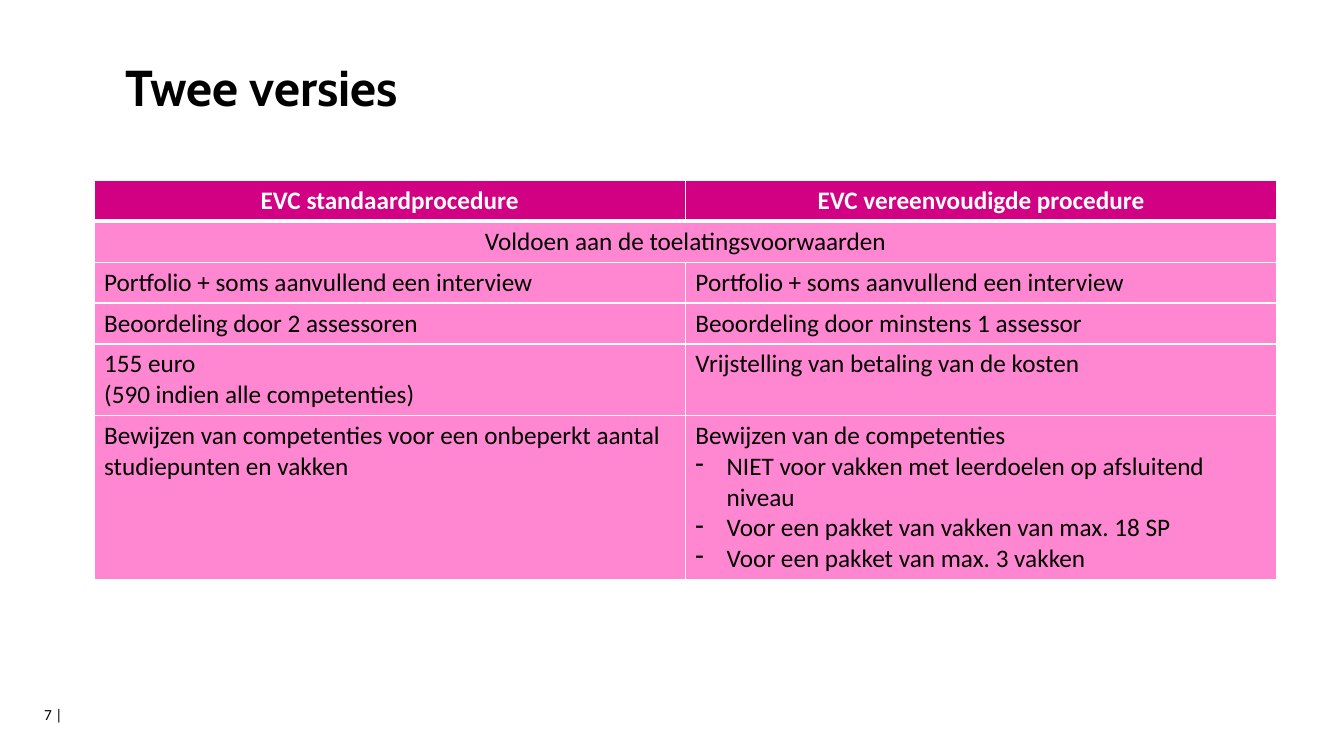
from dataclasses import dataclass

from lxml.etree import SubElement
from pptx import Presentation
from pptx.dml.color import RGBColor
from pptx.enum.text import MSO_ANCHOR, PP_ALIGN as Align
from pptx.oxml.ns import qn
from pptx.slide import Slide
from pptx.table import Table, _Cell as Cell
from pptx.text.text import TextFrame, _Paragraph as Paragraph
from pptx.util import Inches, Length, Pt

BLACK = RGBColor(0x00, 0x00, 0x00)
WHITE = RGBColor(0xFF, 0xFF, 0xFF)
MAGENTA = RGBColor(0xD2, 0x00, 0x82)
PINK = RGBColor(0xFF, 0x87, 0xD1)

SLIDE_WIDTH = Inches(13.33)
SLIDE_HEIGHT = Inches(7.5)
LINE_SHARE = 4.07
CELL_PADDING_SHARE = 1.33
DASH_INDENT = Inches(0.31)


@dataclass(frozen=True)
class Style:
    size: float
    font: str = "Calibri"
    color: RGBColor = BLACK
    bold: bool = False


@dataclass(frozen=True)
class Caption:
    """A text box, placed in percent of the slide."""
    text: str
    left: float
    top: float
    width: float
    height: float
    style: Style
    inset_left: float = 0.1
    line_spacing: float = 1.0


@dataclass(frozen=True)
class Entry:
    text: str
    dashes: tuple[str, ...] = ()


@dataclass(frozen=True)
class Row:
    """One entry per column; a single entry spans the whole row."""
    entries: tuple[Entry, ...]
    lines: int = 1
    header: bool = False


BODY = Style(18)
HEADER = Style(18, color=WHITE, bold=True)

CAPTIONS = (
    Caption("Twee versies", 8.85, 7.73, 88, 12.67,
            Style(36, "Cabin", bold=True), inset_left=0.07, line_spacing=0.9),
    Caption("7 |", 2.55, 92.67, 6.3, 5.33, Style(11)),
)

PROCEDURES = (
    Row((Entry("EVC standaardprocedure"),
         Entry("EVC vereenvoudigde procedure")), header=True),
    Row((Entry("Voldoen aan de toelatingsvoorwaarden"),)),
    Row((Entry("Portfolio + soms aanvullend een interview"),
         Entry("Portfolio + soms aanvullend een interview"))),
    Row((Entry("Beoordeling door 2 assessoren"),
         Entry("Beoordeling door minstens 1 assessor"))),
    Row((Entry("155 euro\n(590 indien alle competenties)"),
         Entry("Vrijstelling van betaling van de kosten")), lines=2),
    Row((Entry("Bewijzen van competenties voor een onbeperkt aantal "
               "studiepunten en vakken"),
         Entry("Bewijzen van de competenties",
               ("NIET voor vakken met leerdoelen op afsluitend niveau",
                "Voor een pakket van vakken van max. 18 SP",
                "Voor een pakket van max. 3 vakken"))), lines=5),
)


def across(percent: float) -> Length:
    return Length(round(SLIDE_WIDTH * percent / 100))


def down(percent: float) -> Length:
    return Length(round(SLIDE_HEIGHT * percent / 100))


def write(paragraph: Paragraph, text: str, style: Style) -> None:
    for number, line in enumerate(text.split("\n")):
        if number:
            paragraph.add_line_break()
        run = paragraph.add_run()
        run.text = line
        run.font.name = style.font
        run.font.size = Pt(style.size)
        run.font.bold = style.bold
        run.font.color.rgb = style.color


def add_caption(slide: Slide, caption: Caption) -> None:
    box = slide.shapes.add_textbox(across(caption.left), down(caption.top),
                                   across(caption.width), down(caption.height))
    frame = box.text_frame
    frame.word_wrap = True
    frame.vertical_anchor = MSO_ANCHOR.TOP
    frame.margin_left = Inches(caption.inset_left)
    paragraph = frame.paragraphs[0]
    paragraph.line_spacing = caption.line_spacing
    write(paragraph, caption.text, caption.style)


def add_dash(frame: TextFrame, text: str) -> None:
    paragraph = frame.add_paragraph()
    properties = paragraph._p.get_or_add_pPr()
    properties.set("marL", str(DASH_INDENT))
    properties.set("indent", str(-DASH_INDENT))
    SubElement(properties, qn("a:buChar"), char="-")
    write(paragraph, text, BODY)


def paint(cell: Cell, header: bool) -> None:
    """Give a cell its white borders and its fill."""
    properties = cell._tc.get_or_add_tcPr()
    for side in "LRTB":
        points = 3 if header and side == "B" else 1
        border = SubElement(properties, qn(f"a:ln{side}"), w=str(Pt(points)))
        solid = SubElement(border, qn("a:solidFill"))
        SubElement(solid, qn("a:srgbClr"), val=str(WHITE))
    cell.fill.solid()
    cell.fill.fore_color.rgb = MAGENTA if header else PINK


def fill_row(table: Table, index: int, row: Row) -> None:
    table.rows[index].height = down(CELL_PADDING_SHARE + row.lines * LINE_SHARE)
    cells = list(table.rows[index].cells)
    for cell in cells:
        paint(cell, row.header)
    spanning = len(row.entries) == 1
    if spanning:
        cells[0].merge(cells[-1])
    for cell, entry in zip(cells, row.entries):
        frame = cell.text_frame
        paragraph = frame.paragraphs[0]
        paragraph.alignment = Align.CENTER if row.header or spanning else Align.LEFT
        write(paragraph, entry.text, HEADER if row.header else BODY)
        for dash in entry.dashes:
            add_dash(frame, dash)


def add_procedures(slide: Slide) -> None:
    height = sum(CELL_PADDING_SHARE + row.lines * LINE_SHARE for row in PROCEDURES)
    table = slide.shapes.add_table(len(PROCEDURES), 2, across(7), down(23.87),
                                   across(88), down(height)).table
    table.horz_banding = False
    for index, row in enumerate(PROCEDURES):
        fill_row(table, index, row)


def main() -> None:
    deck = Presentation()
    deck.slide_width = SLIDE_WIDTH
    deck.slide_height = SLIDE_HEIGHT
    slide = deck.slides.add_slide(deck.slide_layouts[6])
    add_procedures(slide)
    for caption in CAPTIONS:
        add_caption(slide, caption)
    deck.save("out.pptx")


if __name__ == "__main__":
    main()
